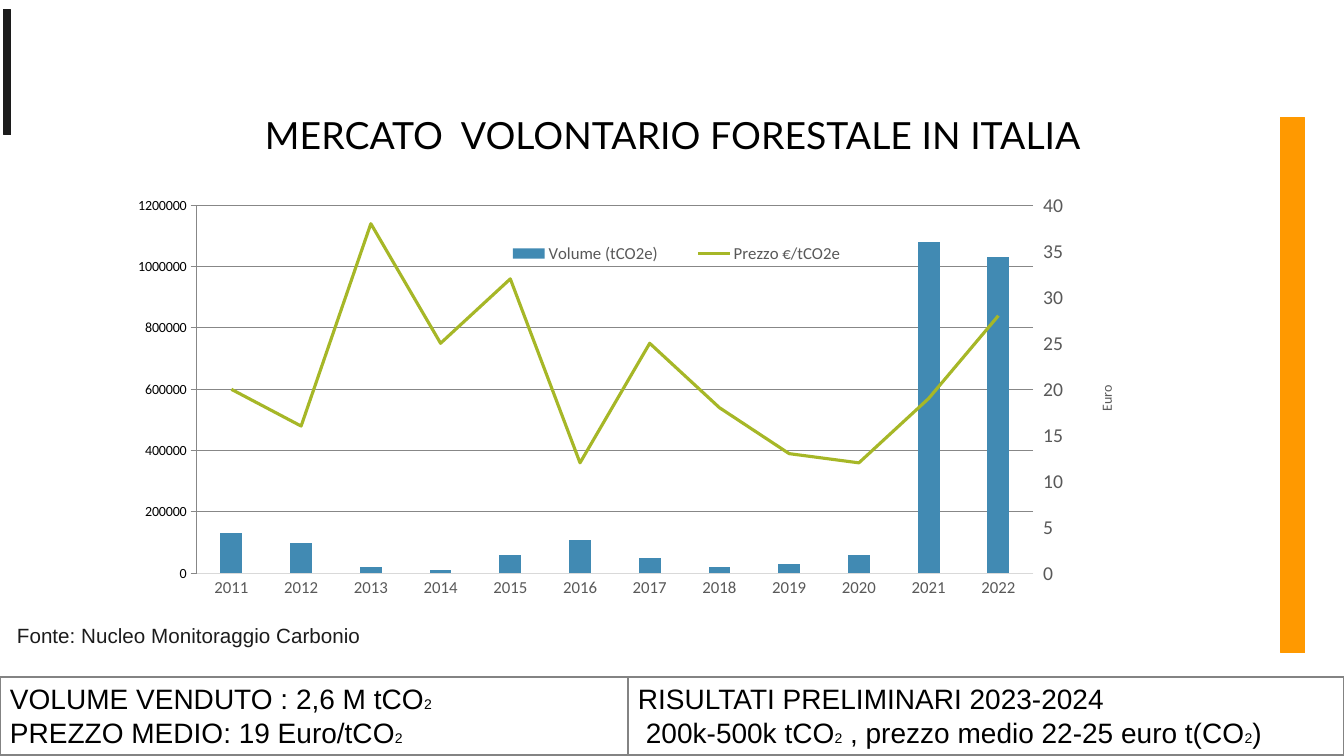
from copy import deepcopy
from dataclasses import dataclass

from lxml.etree import SubElement
from pptx import Presentation
from pptx.chart.axis import CategoryAxis, ValueAxis
from pptx.chart.chart import Chart
from pptx.chart.data import CategoryChartData
from pptx.dml.color import RGBColor
from pptx.enum.chart import XL_CHART_TYPE, XL_LEGEND_POSITION, XL_MARKER_STYLE, XL_TICK_MARK
from pptx.enum.shapes import MSO_SHAPE
from pptx.enum.text import MSO_ANCHOR, MSO_AUTO_SIZE, PP_ALIGN
from pptx.oxml import parse_xml
from pptx.oxml.ns import nsdecls, qn
from pptx.shapes.autoshape import Shape
from pptx.slide import Slide
from pptx.text.text import Font
from pptx.util import Emu, Pt

SLIDE_WIDTH, SLIDE_HEIGHT = 1344, 756
EMU_PER_PX = 12192000 / SLIDE_WIDTH

BLACK = RGBColor(0x00, 0x00, 0x00)
WHITE = RGBColor(0xFF, 0xFF, 0xFF)
CHARCOAL = RGBColor(0x1C, 0x1C, 0x1C)
ORANGE = RGBColor(0xFF, 0x99, 0x00)
BORDER_GRAY = RGBColor(0x83, 0x83, 0x83)
AXIS_GRAY = RGBColor(0x59, 0x59, 0x59)
GRID_GRAY = RGBColor(0xD9, 0xD9, 0xD9)
VOLUME_BLUE = RGBColor(0x41, 0x8A, 0xB3)
PRICE_GREEN = RGBColor(0xA6, 0xB7, 0x27)

YEARS = [str(year) for year in range(2011, 2023)]
VOLUMES = [130000, 100000, 20000, 10000, 60000, 110000,
           50000, 20000, 30000, 60000, 1080000, 1030000]
PRICES = [20, 16, 38, 25, 32, 12, 25, 18, 13, 12, 19, 28]


@dataclass(frozen=True)
class Box:
    left: int
    top: int
    width: int
    height: int

    def emu(self) -> tuple[Emu, Emu, Emu, Emu]:
        return px(self.left), px(self.top), px(self.width), px(self.height)


@dataclass(frozen=True)
class Caption:
    box: Box
    text: str
    font_name: str
    size: float
    color: RGBColor
    anchor: MSO_ANCHOR


@dataclass(frozen=True)
class Bar:
    box: Box
    color: RGBColor


@dataclass(frozen=True)
class Line:
    pieces: tuple[str, ...]
    indent: int = 0


@dataclass(frozen=True)
class Panel:
    box: Box
    lines: tuple[Line, ...]


@dataclass(frozen=True)
class ValueAxisStyle:
    title: str
    title_x: float
    title_y: float
    maximum: int
    step: int
    label_size: int
    tick: XL_TICK_MARK


CAPTIONS = (
    Caption(Box(255, 99, 1223, 74), "MERCATO  VOLONTARIO FORESTALE IN ITALIA",
            "Lato", 26.7, BLACK, MSO_ANCHOR.TOP),
    Caption(Box(7, 585, 1223, 101), "Fonte: Nucleo Monitoraggio Carbonio",
            "Arial", 14.7, CHARCOAL, MSO_ANCHOR.MIDDLE),
)
BARS = (
    Bar(Box(1281, 118, 24, 535), ORANGE),
    Bar(Box(4, 10, 7, 125), CHARCOAL),
)
PANELS = (
    Panel(Box(0, 677, 628, 78), (
        Line(("VOLUME VENDUTO : 2,6 M tCO", "2")),
        Line(("PREZZO MEDIO: 19 Euro/tCO", "2")),
    )),
    Panel(Box(628, 677, 716, 78), (
        Line(("RISULTATI PRELIMINARI 2023-2024",)),
        Line(("200k-500k tCO", "2", " , prezzo medio 22-25 euro t(CO", "2", ")"), indent=8),
    )),
)
CHART_BOX = Box(38, 184, 1101, 463)
VOLUME_AXIS = ValueAxisStyle("TonCO2e", 0.06, 0.4, 1200000, 200000, 9, XL_TICK_MARK.NONE)
PRICE_AXIS = ValueAxisStyle("Euro", 0.96, 0.43, 40, 5, 14, XL_TICK_MARK.OUTSIDE)


def px(length: int) -> Emu:
    return Emu(round(length * EMU_PER_PX))


def style_font(font: Font, name: str, size: float, color: RGBColor) -> None:
    font.name, font.size, font.bold = name, Pt(size), False
    font.color.rgb = color


def add_caption(slide: Slide, caption: Caption) -> None:
    frame = slide.shapes.add_textbox(*caption.box.emu()).text_frame
    frame.word_wrap = True
    frame.vertical_anchor = caption.anchor
    frame.margin_left = frame.margin_right = px(10)
    frame.margin_top = frame.margin_bottom = px(13)
    frame.text = caption.text
    style_font(frame.paragraphs[0].runs[0].font, caption.font_name, caption.size, caption.color)


def add_rectangle(slide: Slide, box: Box, fill: RGBColor, line: RGBColor, weight: float) -> Shape:
    shape = slide.shapes.add_shape(MSO_SHAPE.RECTANGLE, *box.emu())
    shape.shadow.inherit = False
    shape.fill.solid()
    shape.fill.fore_color.rgb = fill
    shape.line.color.rgb = line
    shape.line.width = Pt(weight)
    return shape


def add_panel(slide: Slide, panel: Panel) -> None:
    frame = add_rectangle(slide, panel.box, WHITE, BORDER_GRAY, 1).text_frame
    frame.word_wrap = True
    frame.auto_size = MSO_AUTO_SIZE.SHAPE_TO_FIT_TEXT
    frame.vertical_anchor = MSO_ANCHOR.TOP
    for index, line in enumerate(panel.lines):
        paragraph = frame.add_paragraph() if index else frame.paragraphs[0]
        paragraph.alignment = PP_ALIGN.LEFT
        paragraph._p.get_or_add_pPr().set("marL", str(px(line.indent)))
        for piece in line.pieces:
            run = paragraph.add_run()
            run.text = piece
            style_font(run.font, "Arial", 10 if piece == "2" else 20, BLACK)


def place(parent, index: int, **values: float | str) -> None:
    for layout in parent.findall(qn("c:layout")):
        parent.remove(layout)
    layout = parse_xml(f"<c:layout {nsdecls('c')}><c:manualLayout/></c:layout>")
    for name, value in values.items():
        SubElement(layout[0], qn(f"c:{name}")).set("val", str(value))
    parent.insert(index, layout)


def style_value_axis(axis: ValueAxis, style: ValueAxisStyle) -> None:
    axis.minimum_scale, axis.maximum_scale = 0, style.maximum
    axis.major_unit = style.step
    axis.major_tick_mark = style.tick
    axis.minor_tick_mark = XL_TICK_MARK.NONE
    axis.format.line.fill.background()
    style_font(axis.tick_labels.font, "Calibri", style.label_size, AXIS_GRAY)
    frame = axis.axis_title.text_frame
    frame.text = style.title
    frame._txBody.bodyPr.set("rot", "-5400000")
    style_font(frame.paragraphs[0].runs[0].font, "Calibri", 10, AXIS_GRAY)
    place(axis.axis_title._element, 1, xMode="edge", yMode="edge", x=style.title_x, y=style.title_y)


def move_price_to_right_axis(chart: Chart) -> ValueAxis:
    category, value = deepcopy(chart.category_axis._element), deepcopy(chart.value_axis._element)
    for element, own, crossing in ((category, "101", "102"), (value, "102", "101")):
        element.find(qn("c:axId")).set("val", own)
        element.find(qn("c:crossAx")).set("val", crossing)
    value.find(qn("c:axPos")).set("val", "r")
    value.find(qn("c:crosses")).set("val", "max")
    CategoryAxis(category).visible = False
    line_chart = parse_xml(
        f'<c:lineChart {nsdecls("c")}><c:grouping val="standard"/><c:varyColors val="0"/>'
        '<c:marker val="1"/><c:axId val="101"/><c:axId val="102"/></c:lineChart>')
    price = chart.plots[0].series[1]._element
    for flag in price.findall(qn("c:invertIfNegative")):
        price.remove(flag)
    line_chart.insert(2, price)
    chart.plots[0]._element.addnext(line_chart)
    chart.value_axis._element.addnext(category)
    category.addnext(value)
    axis = ValueAxis(value)
    axis.has_major_gridlines = False
    return axis


def add_market_chart(slide: Slide) -> None:
    data = CategoryChartData()
    data.categories = YEARS
    data.add_series("Volume (tCO2e)", VOLUMES)
    data.add_series("Prezzo €/tCO2e", PRICES)
    chart = slide.shapes.add_chart(XL_CHART_TYPE.COLUMN_CLUSTERED, *CHART_BOX.emu(), data).chart
    style_font(chart.font, "Calibri", 10, BLACK)
    chart.has_title = False
    price_axis = move_price_to_right_axis(chart)
    style_value_axis(chart.value_axis, VOLUME_AXIS)
    style_value_axis(price_axis, PRICE_AXIS)
    years_axis = chart.category_axis
    years_axis.major_tick_mark = XL_TICK_MARK.NONE
    style_font(years_axis.tick_labels.font, "Calibri", 12, AXIS_GRAY)
    for line in (years_axis.format.line, chart.value_axis.major_gridlines.format.line):
        line.color.rgb = GRID_GRAY
        line.width = Pt(0.75)
    columns, curve = chart.plots
    columns.gap_width, columns.overlap = 219, -27
    columns.vary_by_categories = False
    volume, price = columns.series[0], curve.series[0]
    volume.format.fill.solid()
    volume.format.fill.fore_color.rgb = VOLUME_BLUE
    price.format.line.color.rgb = PRICE_GREEN
    price.format.line.width = Pt(2.25)
    price.marker.style = XL_MARKER_STYLE.NONE
    price.smooth = False
    chart.has_legend = True
    chart.legend.position = XL_LEGEND_POSITION.BOTTOM
    chart.legend.include_in_layout = False
    style_font(chart.legend.font, "Calibri", 12, AXIS_GRAY)
    place(chart.legend._element, 1, xMode="edge", yMode="edge", x=0.4, y=0.12, w=0.36, h=0.06)
    place(chart._chartSpace.chart.plotArea, 0, layoutTarget="inner", xMode="edge", yMode="edge",
          x=0.144, y=0.046, w=0.76, h=0.795)


def main() -> None:
    presentation = Presentation()
    presentation.slide_width, presentation.slide_height = px(SLIDE_WIDTH), px(SLIDE_HEIGHT)
    slide = presentation.slides.add_slide(presentation.slide_layouts[6])
    for caption in CAPTIONS:
        add_caption(slide, caption)
    for bar in BARS:
        add_rectangle(slide, bar.box, bar.color, bar.color, 0.75)
    add_market_chart(slide)
    for panel in PANELS:
        add_panel(slide, panel)
    presentation.save("out.pptx")


if __name__ == "__main__":
    main()
